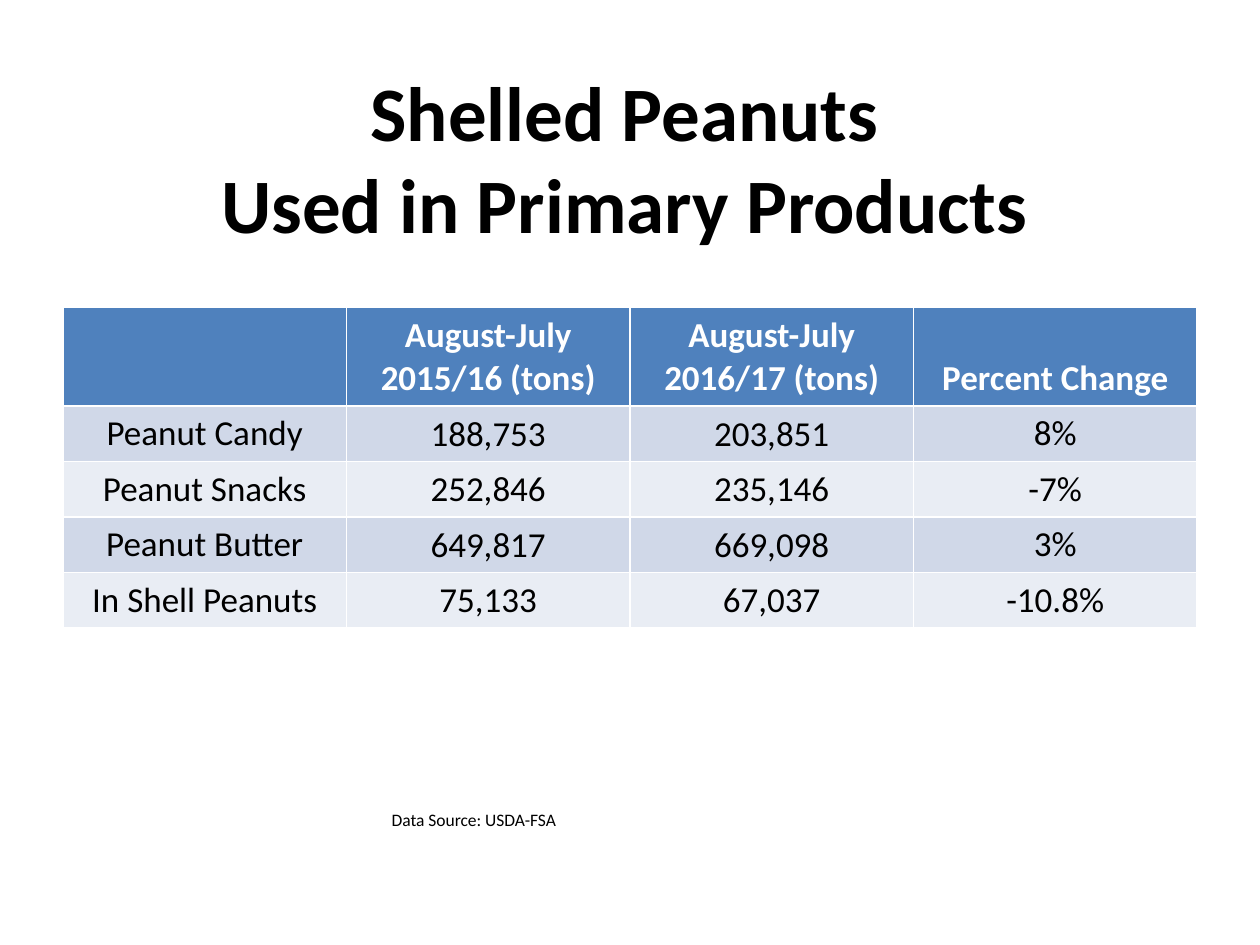
from pptx import Presentation
from pptx.dml.color import RGBColor
from pptx.enum.text import MSO_ANCHOR as Anchor, MSO_AUTO_SIZE as AutoSize, PP_ALIGN as Align
from pptx.util import Inches, Pt

BLACK = RGBColor(0x00, 0x00, 0x00)
WHITE = RGBColor(0xFF, 0xFF, 0xFF)
HEADER_BLUE = RGBColor(0x4F, 0x81, 0xBD)
BANDS = [RGBColor(0xD0, 0xD8, 0xE8), RGBColor(0xE9, 0xED, 0xF4)]

PRODUCT_USE = [
    ["", "August-July 2015/16 (tons)", "August-July 2016/17 (tons)", "Percent Change"],
    ["Peanut Candy", "188,753", "203,851", "8%"],
    ["Peanut Snacks", "252,846", "235,146", "-7%"],
    ["Peanut Butter", "649,817", "669,098", "3%"],
    ["In Shell Peanuts", "75,133", "67,037", "-10.8%"],
]


def format_text(paragraph, align, size, color, bold=False):
    paragraph.alignment = align
    paragraph.font.color.rgb = color
    for name, value in {"name": "Calibri", "size": Pt(size), "bold": bold}.items():
        setattr(paragraph.font, name, value)


prs = Presentation()
prs.slide_width, prs.slide_height = Inches(10), Inches(7.5)
slide = prs.slides.add_slide(prs.slide_layouts[5])

# Title
title = slide.shapes.title
title_format = {"left": Inches(0.46), "top": Inches(0.62),
                "width": Inches(9), "height": Inches(1.25)}
for name, value in title_format.items():
    setattr(title, name, value)
title.text_frame.text = "Shelled Peanuts\vUsed in Primary Products"
title.text_frame.auto_size = AutoSize.NONE
title.text_frame.vertical_anchor = Anchor.MIDDLE
format_text(title.text_frame.paragraphs[0], Align.CENTER, 44, BLACK, True)

# Table of peanut use by product
usage = slide.shapes.add_table(len(PRODUCT_USE), 4, Inches(0.5), Inches(2.44),
                               Inches(9), Inches(2.53)).table
number_format = {"vertical_anchor": Anchor.MIDDLE, "margin_left": Inches(0.01),
                 "margin_right": Inches(0.01), "margin_top": Inches(0.01),
                 "margin_bottom": 0}
for row, values in enumerate(PRODUCT_USE):
    is_header = row == 0
    usage.rows[row].height = Inches(0.77 if is_header else 0.44)
    for column, value in enumerate(values):
        cell = usage.cell(row, column)
        cell.fill.solid()
        cell.fill.fore_color.rgb = HEADER_BLUE if is_header else BANDS[(row - 1) % 2]
        cell.text = value
        format_text(cell.text_frame.paragraphs[0], Align.CENTER, 20,
                    WHITE if is_header else BLACK, is_header)
        if is_header:
            cell.vertical_anchor = Anchor.BOTTOM
        elif column in (1, 2):
            for name, setting in number_format.items():
                setattr(cell, name, setting)

# Data source
source = slide.shapes.add_textbox(Inches(3.01), Inches(6.37), Inches(4.3), Inches(0.27))
source.text_frame.word_wrap = True
source.text_frame.auto_size = AutoSize.SHAPE_TO_FIT_TEXT
source.text_frame.text = "Data Source: USDA-FSA"
format_text(source.text_frame.paragraphs[0], Align.LEFT, 10, BLACK)

prs.save("out.pptx")
